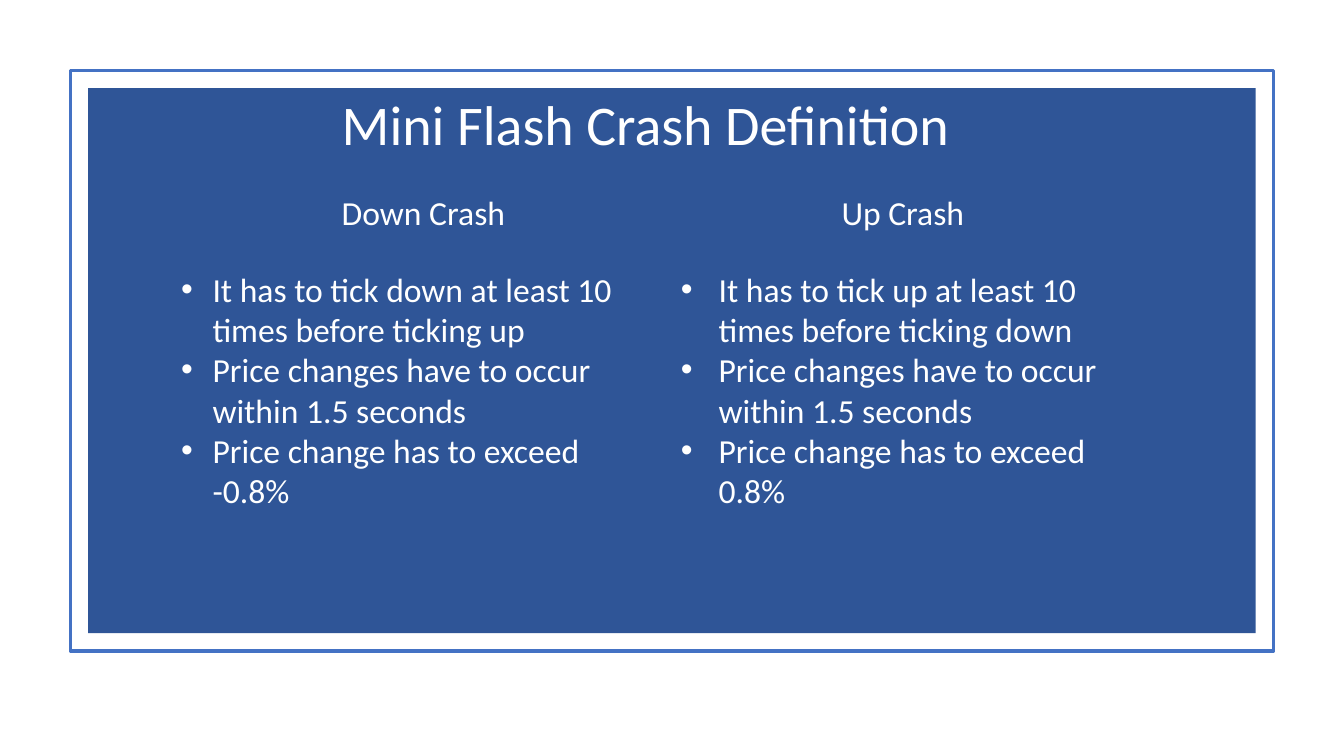
from pptx import Presentation
from pptx.dml.color import RGBColor
from pptx.enum.shapes import MSO_SHAPE as Shape
from pptx.enum.text import MSO_AUTO_SIZE as AutoSize
from pptx.oxml.xmlchemy import OxmlElement as make_element
from pptx.util import Emu, Pt

PX = 9525
WHITE, FRAME_BLUE, PANEL_BLUE = "FFFFFF", "4472C4", "2F5597"
FONT = "Calibri"
COLUMN_PITCH = 476
COLUMNS = [
    ("Down Crash", 30, [
        "It has to tick down at least 10 times before ticking up",
        "Price changes have to occur within 1.5 seconds",
        "Price change has to exceed -0.8%",
    ]),
    ("Up Crash", 36, [
        "It has to tick up at least 10 times before ticking down",
        "Price changes have to occur within 1.5 seconds",
        "Price change has to exceed 0.8%",
    ]),
]


def px(length):
    return Emu(length * PX)


def color(value):
    return RGBColor.from_string(value)


def add_rectangle(page, left, top, width, height):
    box = page.shapes.add_shape(
        Shape.RECTANGLE, px(left), px(top), px(width), px(height))
    box.shadow.inherit = False
    return box


def add_bullet(para, indent):
    properties = para._p.get_or_add_pPr()
    properties.set("marL", str(px(indent)))
    properties.set("indent", str(-px(indent)))
    font = make_element("a:buFont")
    font.set("typeface", "Arial")
    bullet = make_element("a:buChar")
    bullet.set("char", "•")
    properties.extend([font, bullet])


def add_text(page, left, top, width, height, lines, size, indent=0):
    box = page.shapes.add_textbox(px(left), px(top), px(width), px(height))
    frame = box.text_frame
    frame.word_wrap = True
    frame.auto_size = AutoSize.SHAPE_TO_FIT_TEXT
    for index, line in enumerate(lines):
        para = frame.add_paragraph() if index else frame.paragraphs[0]
        if indent:
            add_bullet(para, indent)
        span = para.add_run()
        span.text = line
        span.font.name = FONT
        span.font.size = Pt(size)
        span.font.color.rgb = color(WHITE)


def draw_panel(page, left, top, width, height, inset):
    border = add_rectangle(page, left, top, width, height)
    border.fill.background()
    border.line.color.rgb = color(FRAME_BLUE)
    border.line.width = Pt(2.5)
    panel = add_rectangle(page, left + inset, top + inset,
                          width - 2 * inset, height - 2 * inset)
    panel.fill.solid()
    panel.fill.fore_color.rgb = color(PANEL_BLUE)
    panel.line.fill.background()


def draw_column(page, left, top, width, heading, indent, points):
    add_text(page, left + 153, top, 243, 48, [heading], 24)
    add_text(page, left, top + 73, width, 242, points, 24, indent)


def draw_definition(page, left, top, width, height):
    draw_panel(page, left, top, width, height, 17)
    add_text(page, left + 249, top + 14, 732, 74,
             ["Mini Flash Crash Definition"], 40)
    for index, (heading, indent, points) in enumerate(COLUMNS):
        draw_column(page, left + 96 + index * COLUMN_PITCH, top + 111, 446,
                    heading, indent, points)


def main():
    deck = Presentation()
    deck.slide_width, deck.slide_height = px(1280), px(720)
    page = deck.slides.add_slide(deck.slide_layouts[6])
    draw_definition(page, 67, 67, 1146, 553)
    deck.save("out.pptx")


if __name__ == "__main__":
    main()
